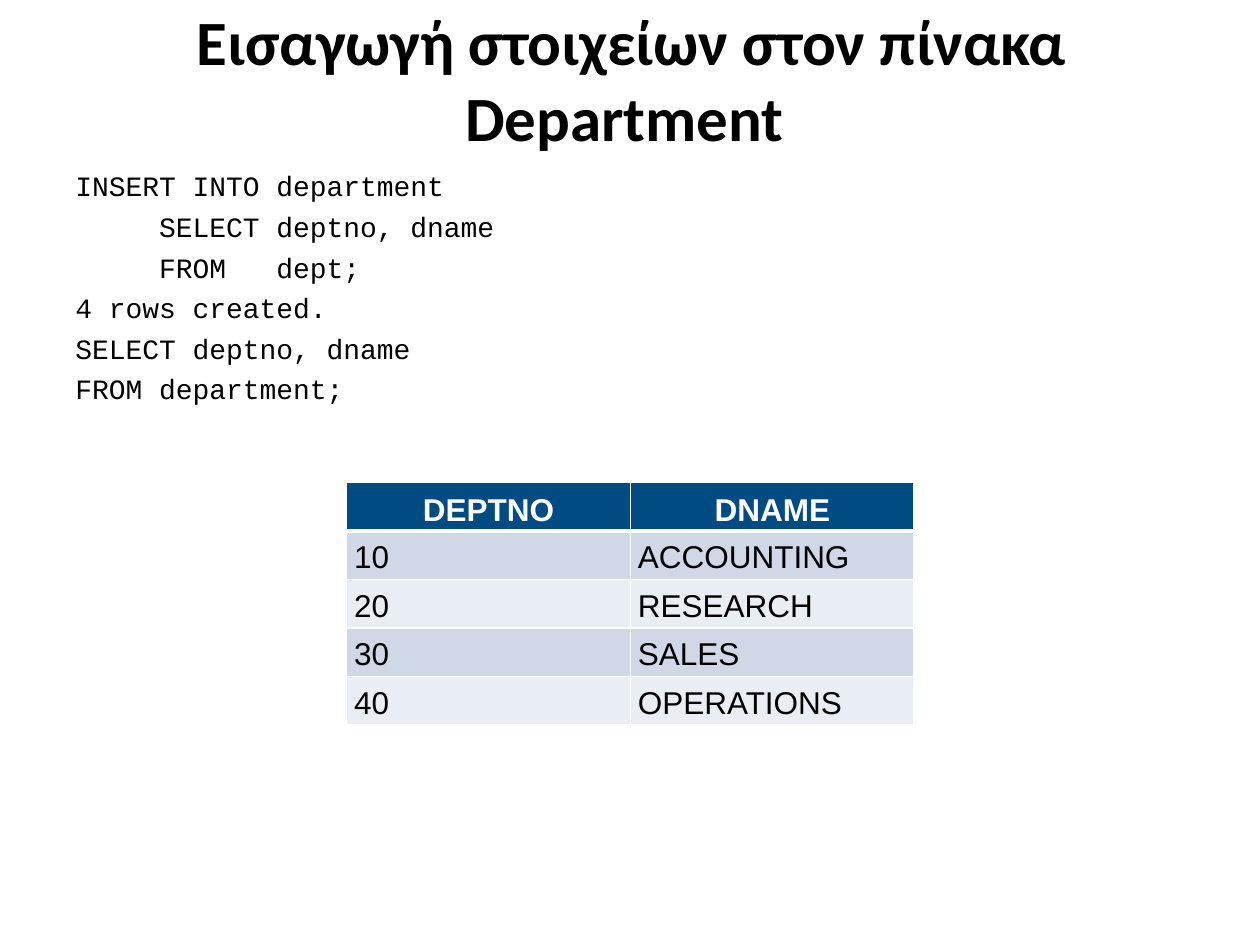
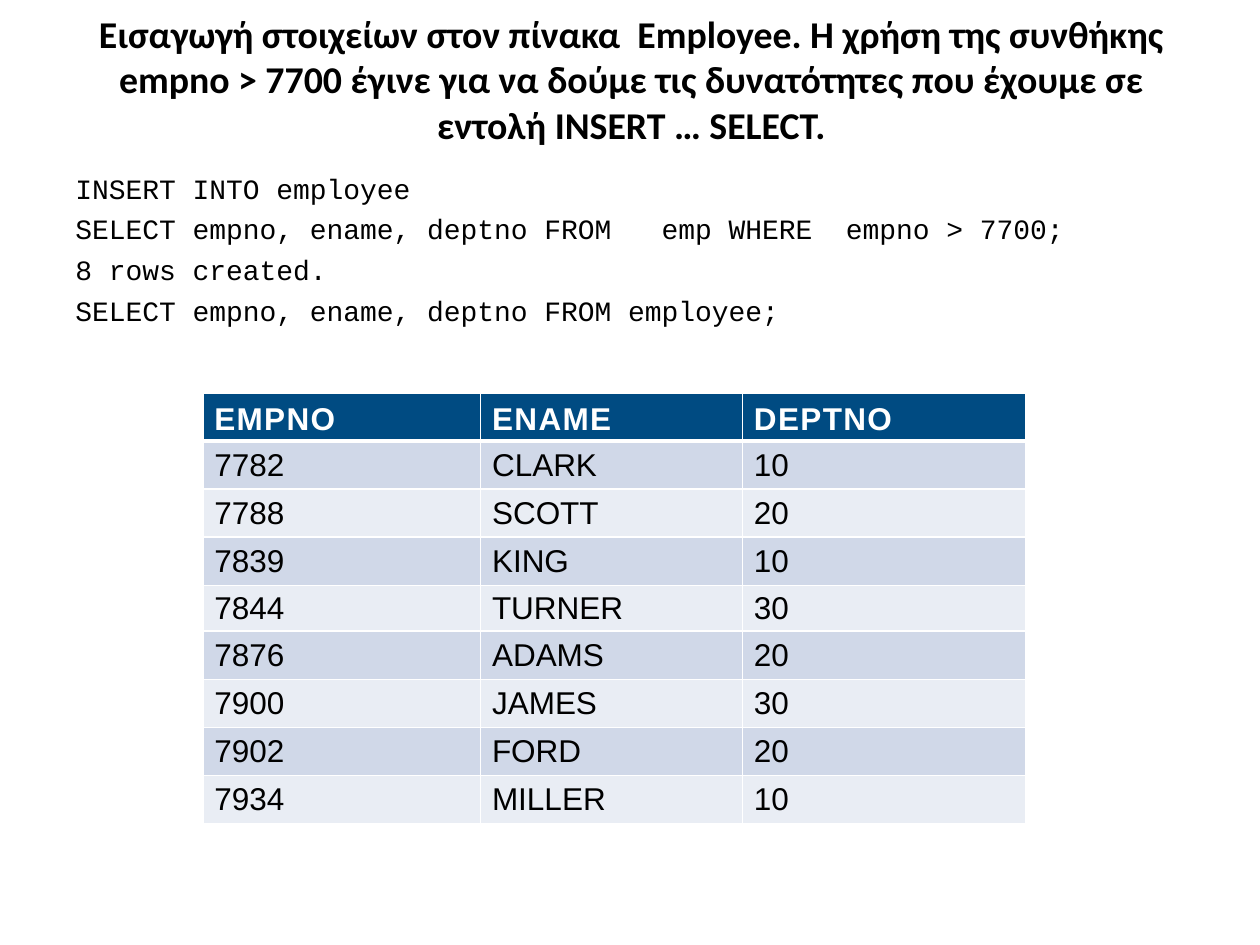
from lxml.etree import SubElement
from pptx import Presentation
from pptx.dml.color import RGBColor
from pptx.enum.text import MSO_ANCHOR, PP_ALIGN
from pptx.oxml.ns import qn
from pptx.util import Cm, Pt

BLACK = RGBColor(0x00, 0x00, 0x00)
WHITE = RGBColor(0xFF, 0xFF, 0xFF)
HEADER_BLUE = RGBColor(0x00, 0x4B, 0x82)
BAND_DARK = RGBColor(0xD0, 0xD8, 0xE8)
BAND_LIGHT = RGBColor(0xE9, 0xED, 0xF4)


class Deck:
    title_font = "Calibri"
    code_font = "Courier New"
    table_font = "Arial"
    code_indent = Cm(1.69)

    def __init__(self):
        self.presentation = Presentation()
        self.presentation.slide_width = Cm(25.4)
        self.presentation.slide_height = Cm(19.05)
        self.slide = None

    def new_slide(self):
        self.slide = self.presentation.slides.add_slide(self.presentation.slide_layouts[6])

    def run(self, paragraph, text, font, size, color=BLACK, bold=False, tracking=0):
        run = paragraph.add_run()
        run.text = text
        run.font.name = font
        run.font.size = Pt(size)
        run.font.bold = bold
        run.font.color.rgb = color
        if tracking:
            run.font._element.set("spc", str(tracking))

    def text_frame(self, left, top, width, height, anchor):
        shape = self.slide.shapes.add_textbox(Cm(left), Cm(top), Cm(width), Cm(height))
        shape.text_frame.word_wrap = True
        shape.text_frame.vertical_anchor = anchor
        return shape.text_frame

    def title(self, text, size):
        frame = self.text_frame(1.3, 0.33, 22.86, 2.51, MSO_ANCHOR.MIDDLE)
        paragraph = frame.paragraphs[0]
        paragraph.alignment = PP_ALIGN.CENTER
        self.run(paragraph, text, self.title_font, size, bold=True)

    def code(self, lines, indented=(), first_spacing=1.0):
        frame = self.text_frame(1.27, 3.33, 22.86, 14, MSO_ANCHOR.TOP)
        for index, line in enumerate(lines):
            paragraph = frame.add_paragraph() if index else frame.paragraphs[0]
            paragraph.space_before = Pt(4)
            paragraph.line_spacing = 1.0 if index else first_spacing
            if index in indented:
                properties = paragraph._p.get_or_add_pPr()
                properties.set("marL", str(self.code_indent))
                properties.set("indent", "0")
            self.run(paragraph, line, self.code_font, 16)

    def borders(self, cell, top, bottom):
        properties = cell._tc.get_or_add_tcPr()
        for side, width in (("lnL", 1), ("lnR", 1), ("lnT", top), ("lnB", bottom)):
            line = SubElement(properties, qn(f"a:{side}"), w=str(Pt(width)))
            fill = SubElement(line, qn("a:solidFill"))
            SubElement(fill, qn("a:srgbClr"), val=str(WHITE))

    def table(self, left, top, widths, heights, rows, margins,
              header_align=PP_ALIGN.LEFT, line_spacing=1.0, header_tracking=0):
        table = self.slide.shapes.add_table(
            len(rows), len(widths), Cm(left), Cm(top), Cm(sum(widths)), Cm(sum(heights))
        ).table
        table.first_row = table.horz_banding = False
        for column, width in zip(table.columns, widths):
            column.width = Cm(width)
        for row, height in zip(table.rows, heights):
            row.height = Cm(height)
        for row_index, values in enumerate(rows):
            header = row_index == 0
            band = BAND_DARK if row_index % 2 else BAND_LIGHT
            for column_index, value in enumerate(values):
                cell = table.cell(row_index, column_index)
                cell.margin_left = cell.margin_right = Cm(margins[0])
                cell.margin_top = cell.margin_bottom = Cm(margins[1])
                cell.vertical_anchor = MSO_ANCHOR.BOTTOM if header else MSO_ANCHOR.MIDDLE
                self.borders(cell, 3 if row_index == 1 else 1, 3 if header else 1)
                cell.fill.solid()
                cell.fill.fore_color.rgb = HEADER_BLUE if header else band
                paragraph = cell.text_frame.paragraphs[0]
                paragraph.alignment = header_align if header else PP_ALIGN.LEFT
                paragraph.line_spacing = line_spacing
                self.run(paragraph, value, self.table_font, 18,
                         WHITE if header else BLACK, header,
                         header_tracking if header else 0)


def add_department_slide(deck):
    deck.new_slide()
    deck.title("Εισαγωγή στοιχείων στον πίνακα Department ", 36)
    deck.code(
        [
            "INSERT INTO department",
            "SELECT deptno, dname",
            "FROM   dept;",
            "4 rows created.",
            "SELECT deptno, dname",
            "FROM department;",
        ],
        indented=(1, 2),
        first_spacing=0.93,
    )
    departments = [
        ("DEPTNO", "DNAME"),
        ("10", "ACCOUNTING"),
        ("20", "RESEARCH"),
        ("30", "SALES"),
        ("40", "OPERATIONS"),
    ]
    deck.table(6.99, 9.73, [5.72] * 2, [0.91] * len(departments), departments,
               (0.15, 0.05), PP_ALIGN.CENTER, line_spacing=1.15)


def add_employee_slide(deck):
    deck.new_slide()
    deck.title(
        "Εισαγωγή στοιχείων στον πίνακα  Employee. Η χρήση της συνθήκης empno > 7700 "
        "έγινε για να δούμε τις δυνατότητες που έχουμε σε εντολή INSERT … SELECT.",
        21.6,
    )
    deck.code([
        "INSERT INTO employee",
        "SELECT empno, ename, deptno FROM   emp WHERE  empno > 7700;",
        "8 rows created.",
        "SELECT empno, ename, deptno FROM employee;",
    ])
    employees = [
        ("EMPNO", "ENAME", "DEPTNO"),
        ("7782", "CLARK", "10"),
        ("7788", "SCOTT", "20"),
        ("7839", "KING", "10"),
        ("7844", "TURNER", "30"),
        ("7876", "ADAMS", "20"),
        ("7900", "JAMES", "30"),
        ("7902", "FORD", "20"),
        ("7934", "MILLER", "10"),
    ]
    heights = [0.97] * 4 + [0.86] + [0.97] * 4
    deck.table(4.09, 7.92, [5.6, 5.28, 5.7], heights, employees,
               (0.23, 0.08), header_tracking=80)


def main():
    deck = Deck()
    add_department_slide(deck)
    add_employee_slide(deck)
    deck.presentation.save("out.pptx")


if __name__ == "__main__":
    main()
